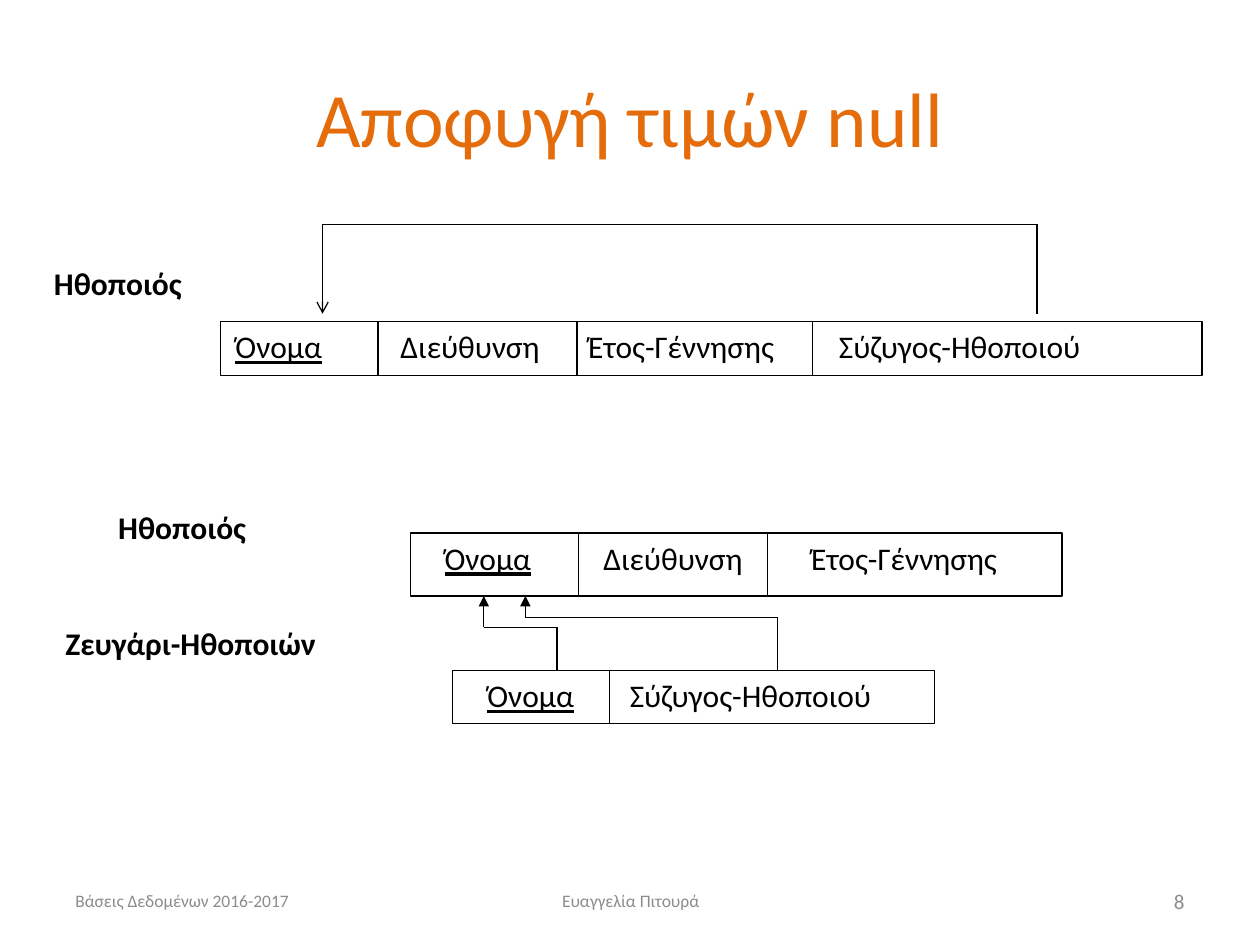
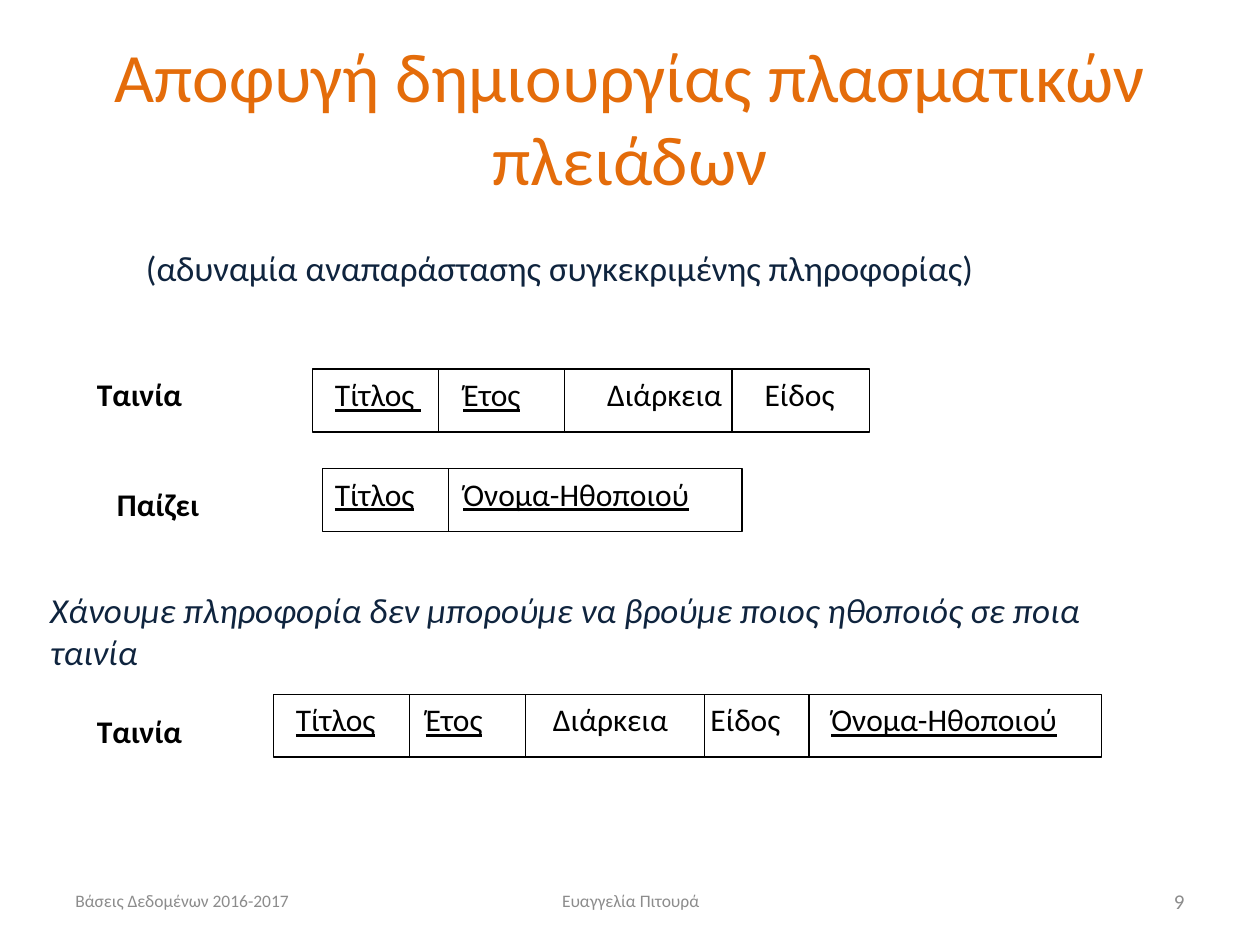
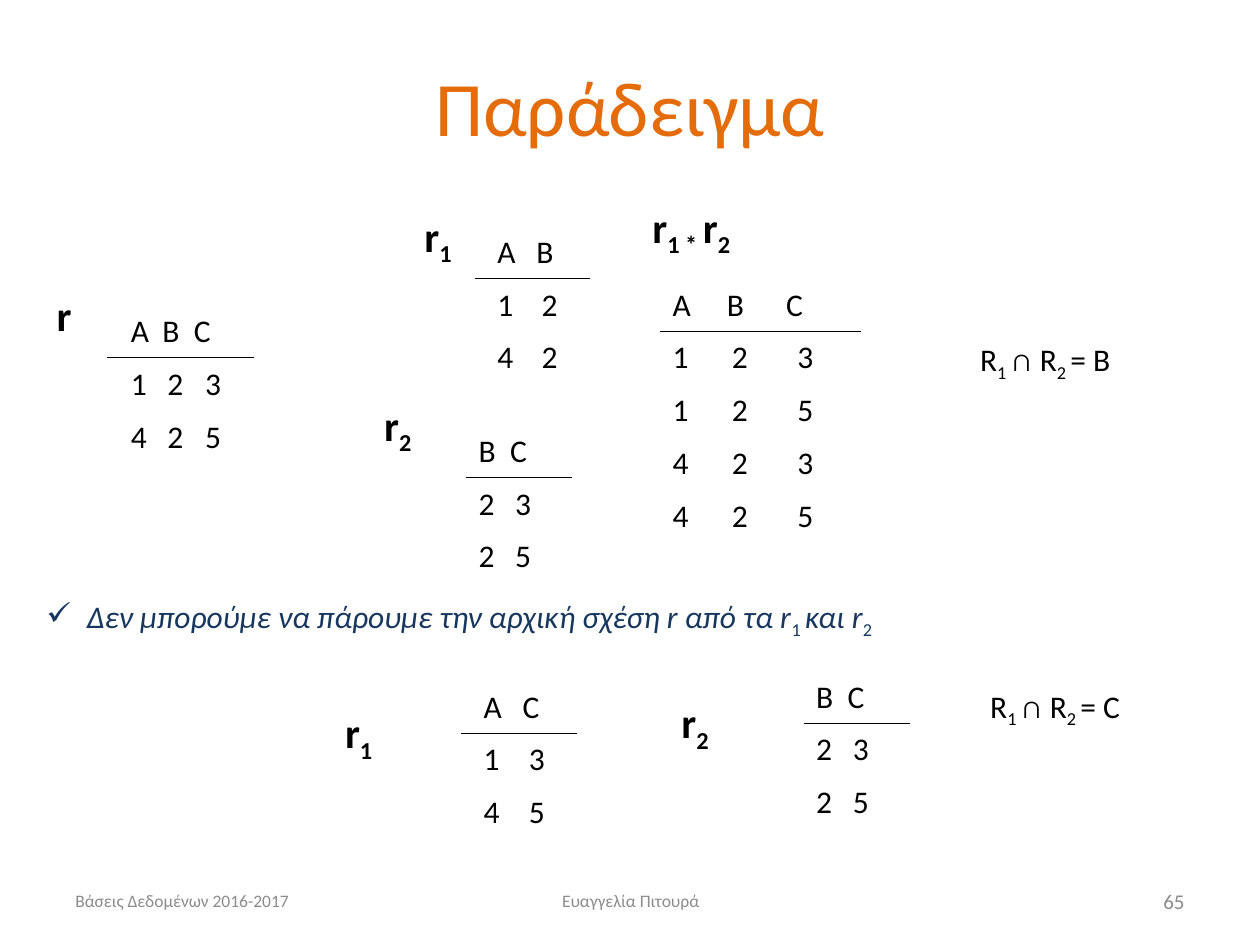
import dataclasses

import pptx
import pptx.dml.color
import pptx.enum.shapes
import pptx.enum.text
import pptx.oxml.ns
import pptx.util
from lxml import etree

Inches, Pt = pptx.util.Inches, pptx.util.Pt
ALIGN = pptx.enum.text.PP_ALIGN
ANCHOR = pptx.enum.text.MSO_ANCHOR


@dataclasses.dataclass(frozen=True)
class Theme:
    font: str = "Calibri"
    ink: str = "000000"
    accent: str = "E46C0A"
    note: str = "0F243E"
    remark: str = "17375E"
    muted: str = "8C8C8C"
    title_size: float = 44
    symbol_size: float = 24
    note_size: float = 20
    body_size: float = 18
    number_size: float = 12
    footer_size: float = 10
    row_gap: float = 8.6
    line_width: float = 0.75
    inset: float = 0.1


THEME = Theme()
TITLE_BOX = (0.5, 0.3, 9, 1.25)
FOOTER_TOP, FOOTER_HEIGHT = 6.95, 0.4


def rgb(colour):
    return pptx.dml.color.RGBColor.from_string(colour)


def add_xml(parent, tag, **attributes):
    return etree.SubElement(parent, pptx.oxml.ns.qn(tag), attributes)


def add_text(slide, box, paragraphs, size=THEME.body_size, colour=THEME.ink, bold=False,
             italic=False, align=ALIGN.LEFT, anchor=ANCHOR.TOP, stops=(), bullet=None,
             hanging=0):
    """Each paragraph is a string or a list of runs; a run is a string or (string, style).

    stops holds one list of tab positions for each paragraph, in inches.
    """
    frame = slide.shapes.add_textbox(*map(Inches, box)).text_frame
    frame.word_wrap = True
    frame.vertical_anchor = anchor
    for index, content in enumerate([paragraphs] if isinstance(paragraphs, str) else paragraphs):
        paragraph = frame.add_paragraph() if index else frame.paragraphs[0]
        paragraph.alignment = align
        paragraph.space_before = Pt(THEME.row_gap if index else 0)
        properties = paragraph._p.get_or_add_pPr()
        if bullet:
            properties.set("marL", str(Inches(hanging)))
            properties.set("indent", str(-Inches(hanging)))
            add_xml(properties, "a:buChar", char=bullet)
        if stops:
            tabs = add_xml(properties, "a:tabLst")
            for stop in stops[index]:
                add_xml(tabs, "a:tab", pos=str(Inches(stop)), algn="l")
        for piece in [content] if isinstance(content, str) else content:
            words, style = (piece, {}) if isinstance(piece, str) else piece
            run = paragraph.add_run()
            run.text = words
            run.font.name = THEME.font
            run.font.size = Pt(size)
            run.font.bold = bold
            run.font.italic = style.get("italic", italic)
            run.font.underline = style.get("underline", False)
            run.font.color.rgb = rgb(colour)
            if style.get("subscript"):
                run._r.get_or_add_rPr().set("baseline", "-25000")


def sub(words):
    return words, {"subscript": True, "italic": False}


def add_line(slide, start, end, arrow=None):
    line = slide.shapes.add_connector(pptx.enum.shapes.MSO_CONNECTOR.STRAIGHT,
                                      *map(Inches, (*start, *end)))
    line.line.color.rgb = rgb(THEME.ink)
    line.line.width = Pt(THEME.line_width)
    if arrow:
        add_xml(line.line._get_or_add_ln(), "a:tailEnd", type=arrow)
    add_xml(line._element.spPr, "a:effectLst")


def add_reference(slide, points, arrow):
    """Draw a foreign key as straight legs, with the arrowhead on the last one."""
    for index in range(len(points) - 1):
        last = index == len(points) - 2
        add_line(slide, points[index], points[index + 1], arrow if last else None)


def add_schema(slide, box, attributes, dividers):
    """Attributes are (name, offset from the box's left, is key)."""
    left, top, width, height = box
    frame = slide.shapes.add_shape(pptx.enum.shapes.MSO_SHAPE.RECTANGLE, *map(Inches, box))
    frame.shadow.inherit = False
    frame.fill.background()
    frame.line.color.rgb = rgb(THEME.ink)
    frame.line.width = Pt(THEME.line_width)
    for offset in dividers:
        add_line(slide, (left + offset, top), (left + offset, top + height))

    first = attributes[0][1]
    runs = []
    for name, offset, is_key in attributes:
        if runs:
            runs.append("\t")
        runs.append((name, {"underline": is_key}))
    add_text(slide, (left + first - THEME.inset, top, width, 0.4), [runs],
             stops=[[offset - first for _, offset, _ in attributes[1:]]])


def add_relation(slide, corner, label, label_offset, rows, heading_stops, value_stops, rule):
    """Rows start with the heading; rule is (offset, length) of the line under it."""
    left, top = corner
    dx, dy = label_offset
    add_text(slide, (left + dx, top + dy, 1.42, 0.5), [label],
             size=THEME.symbol_size, bold=True)
    add_text(slide, (left, top, 2, 0.43 * len(rows)), ["\t".join(row) for row in rows],
             stops=[heading_stops] + [value_stops] * (len(rows) - 1))
    offset, length = rule
    add_line(slide, (left + offset, top + 0.42), (left + offset + length, top + 0.42))


def add_names(slide, names):
    for name, left, top in names:
        add_text(slide, (left, top, 3.4, 0.43), name, bold=True)


def add_base(prs, title, number, title_box=TITLE_BOX, title_size=THEME.title_size):
    slide = prs.slides.add_slide(prs.slide_layouts[6])
    add_text(slide, title_box, title, size=title_size, colour=THEME.accent,
             align=ALIGN.CENTER, anchor=ANCHOR.MIDDLE)
    for words, left, width, size, align in (
        ("Βάσεις Δεδομένων 2016-2017", 0.5, 2.33, THEME.footer_size, ALIGN.LEFT),
        ("Ευαγγελία Πιτουρά", 3.42, 3.17, THEME.footer_size, ALIGN.CENTER),
        (number, 7.17, 2.33, THEME.number_size, ALIGN.RIGHT),
    ):
        add_text(slide, (left, FOOTER_TOP, width, FOOTER_HEIGHT), words, size=size,
                 colour=THEME.muted, align=align, anchor=ANCHOR.MIDDLE)
    return slide


def build_null_slide(prs):
    slide = add_base(prs, "Αποφυγή τιμών null", "8")
    add_names(slide, [("Ηθοποιός", 0.33, 2.05), ("Ηθοποιός", 0.84, 3.98),
                      ("Ζευγάρι-Ηθοποιών", 0.42, 4.9)])
    add_schema(slide, (1.75, 2.55, 7.79, 0.43),
               [("Όνομα", 0.12, True), ("Διεύθυνση", 1.43, False),
                ("Έτος-Γέννησης", 2.92, False), ("Σύζυγος-Ηθοποιού", 4.91, False)],
               [1.25, 2.83, 4.7])
    add_schema(slide, (3.26, 4.23, 5.17, 0.5),
               [("Όνομα", 0.27, True), ("Διεύθυνση", 1.53, False),
                ("Έτος-Γέννησης", 3.18, False)],
               [1.33, 2.83])
    add_schema(slide, (3.59, 5.32, 3.83, 0.42),
               [("Όνομα", 0.28, True), ("Σύζυγος-Ηθοποιού", 1.41, False)],
               [1.25])
    for source, target, bottom, turn, top, arrow in (
        (8.23, 2.56, 2.49, 1.78, 2.49, "arrow"),
        (4.42, 3.84, 5.32, 4.98, 4.73, "triangle"),
        (6.17, 4.17, 5.32, 4.9, 4.73, "triangle"),
    ):
        add_reference(slide, [(source, bottom), (source, turn), (target, turn), (target, top)],
                      arrow)


def build_spurious_slide(prs):
    slide = add_base(prs, "Αποφυγή δημιουργίας πλασματικών πλειάδων", "9", title_size=39.6)
    add_text(slide, (1.06, 1.91, 7.25, 0.44),
             "(αδυναμία αναπαράστασης συγκεκριμένης πληροφορίας)",
             size=THEME.note_size, colour=THEME.note)
    add_text(slide, (0.3, 4.62, 9.13, 0.44),
             "Χάνουμε πληροφορία δεν μπορούμε να βρούμε ποιος ηθοποιός σε ποια ταινία",
             size=THEME.note_size, colour=THEME.note, italic=True)
    add_names(slide, [("Ταινία", 0.67, 2.93), ("Παίζει", 0.83, 3.8), ("Ταινία", 0.67, 5.6)])
    add_schema(slide, (2.48, 2.93, 4.42, 0.5),
               [("Τίτλος ", 0.18, True), ("Έτος", 1.2, True),
                ("Διάρκεια", 2.34, False), ("Είδος", 3.59, False)],
               [1, 2, 3.33])
    add_schema(slide, (2.56, 3.72, 3.33, 0.5),
               [("Τίτλος", 0.1, True), ("Όνομα-Ηθοποιού", 1.12, True)],
               [1])
    add_schema(slide, (2.17, 5.51, 6.57, 0.5),
               [("Τίτλος", 0.18, True), ("Έτος", 1.21, True), ("Διάρκεια", 2.22, False),
                ("Είδος", 3.47, False), ("Όνομα-Ηθοποιού", 4.43, True)],
               [1.08, 2, 3.42, 4.25])


def build_example_slide(prs):
    slide = add_base(prs, "Παράδειγμα", "65", title_box=(0.5, 0.21, 9, 1.25))
    r1, r2 = ["r", sub("1")], ["r", sub("2")]
    add_relation(slide, (0.94, 2.42), "r", (-0.59, -0.17), ["ΑBC", "123", "425"],
                 [0.25, 0.5], [0.29, 0.59], (-0.09, 1.17))
    add_relation(slide, (3.85, 1.79), r1, (-0.58, -0.17), ["AB", "12", "42"],
                 [0.31], [0.35], (-0.08, 0.91))
    add_relation(slide, (5.24, 2.21), ["r", sub("1 * "), "r", sub("2")], (-0.16, -0.66),
                 ["ABC", "123", "125", "423", "425"],
                 [0.43, 0.9], [0.47, 0.99], (0, 1.59))
    add_relation(slide, (3.74, 5.4), r1, (-1.1, 0.16), ["AC", "13", "45"],
                 [0.31], [0.36], (-0.08, 0.92))
    for corner, label_offset in (((3.7, 3.37), (-0.75, -0.25)), ((6.38, 5.32), (-1.07, 0.16))):
        add_relation(slide, corner, r2, label_offset, ["BC", "23", "25"],
                     [0.25], [0.29], (0, 0.84))
    for shared, left, top in (("Β", 7.68, 2.65), ("C", 7.76, 5.4)):
        add_text(slide, (left, top, 1.92, 0.43),
                 [["R", sub("1 "), "∩ R", sub("2 "), f"= {shared}"]])
    add_text(slide, (0.27, 4.69, 8.98, 0.4),
             [["Δεν μπορούμε να πάρουμε την αρχική σχέση r από τα r", sub("1 "),
               "και r", sub("2")]],
             colour=THEME.remark, italic=True, align=ALIGN.JUSTIFY, bullet="✓", hanging=0.32)


def main():
    prs = pptx.Presentation()
    prs.slide_width, prs.slide_height = Inches(10), Inches(7.5)
    build_null_slide(prs)
    build_spurious_slide(prs)
    build_example_slide(prs)
    prs.save("out.pptx")


if __name__ == "__main__":
    main()
